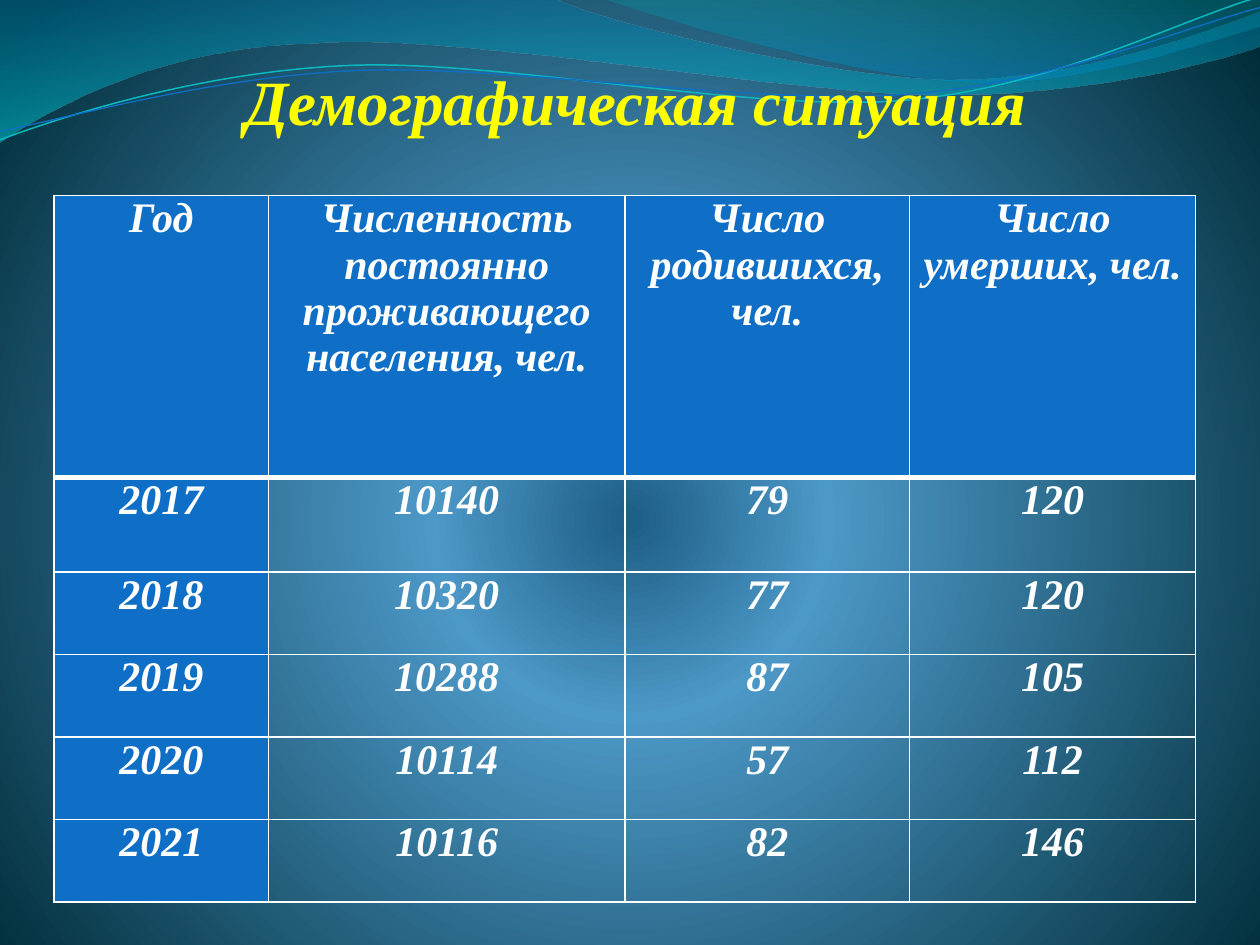
from dataclasses import dataclass
from math import cos, radians, sin
from typing import Optional

from lxml.etree import Element, SubElement
from pptx import Presentation
from pptx.dml.color import RGBColor as Rgb
from pptx.enum.text import MSO_ANCHOR as Anchor, MSO_AUTO_SIZE as Fit, PP_ALIGN as Align
from pptx.oxml.ns import qn
from pptx.util import Inches, Pt

FONT = "Times New Roman"
COLORS = {"blue": "0F6FC6", "white": "FFFFFF", "title": "FFFF00", "aqua": "0AB8BF"}
HEAD = ("Год", "Численность постоянно проживающего населения, чел.",
        "Число родившихся, чел.", "Число умерших, чел.")
DATA = ((2017, 10140, 79, 120), (2018, 10320, 77, 120), (2019, 10288, 87, 105),
        (2020, 10114, 57, 112), (2021, 10116, 82, 146))
TALL = 5.61
COLS = (1.7, 2.83, 2.26, 2.27)
ROWS = (2.24, 0.75) + ((TALL - 2.24 - 0.75) / 4,) * 4


@dataclass
class Stop:
    at: int
    color: str
    alpha: int = 100


@dataclass
class Wave:
    """Each step is a line end (2 numbers) or a Bezier curve (6 numbers)."""
    box: tuple
    start: tuple
    steps: tuple
    stops: tuple = ()
    line: Optional[str] = None
    width: float = 0
    turn: float = 0


BACK = (Stop(1, "1F6088"), Stop(25, "4C98C7"), Stop(100, "002C38"))
WAVES = (
    Wave((-0.01, -0.01, 10.02, 1.14), (0, 0),
         ((4.4, -0.01), (4.76, 0.17, 6.64, 0.63, 7.58, 0.63),
          (8.53, 0.63, 9.58, 0.26, 10, 0.09), (10.01, 0.36),
          (9.83, 0.44, 8.7, 0.76, 7.46, 0.75), (6.22, 0.75, 3.82, 0.28, 2.57, 0.34),
          (1.29, 0.36, 0.46, 0.83, -0.01, 1.13), (0, 0)),
         stops=(Stop(0, "0074A1", 45), Stop(100, "00C6CF", 55))),
    Wave((4.79, -0.01, 5.21, 0.7), (4.79, -0.01),
         ((5.09, 0.11, 6.82, 0.62, 7.69, 0.65), (8.56, 0.69, 9.61, 0.32, 10, 0.21),
          (10, 0), (4.79, -0.01)),
         stops=(Stop(0, "00A1A9", 30), Stop(80, "008BBF", 45))),
    Wave((-0.02, 0.22, 10.02, 0.71), (0, 1.11),
         ((0.48, 0.93, 1.58, 0.57, 2.77, 0.52), (3.95, 0.47, 5.93, 0.89, 7.13, 0.8),
          (8.33, 0.71, 9.38, 0.15, 9.98, -0.02)), line="aqua", width=0.85, turn=-2.7),
    Wave((-0.02, 0.3, 10.03, 0.58), (0, 1.04),
         ((0.47, 0.96, 1.64, 0.61, 2.83, 0.56), (4.03, 0.51, 5.97, 0.84, 7.17, 0.75),
          (8.36, 0.67, 9.41, 0.21, 10, 0.06)), line="blue", width=0.75, turn=-2.7),
)


def rgb(name: str) -> Rgb:
    return Rgb.from_string(COLORS[name])


def grad(stops: tuple) -> Element:
    """Gradient fill without its direction."""
    fill = Element(qn("a:gradFill"), rotWithShape="1")
    items = SubElement(fill, qn("a:gsLst"))
    for stop in stops:
        mark = SubElement(items, qn("a:gs"), pos=str(stop.at * 1000))
        color = SubElement(mark, qn("a:srgbClr"), val=stop.color)
        if stop.alpha < 100:
            SubElement(color, qn("a:alpha"), val=str(stop.alpha * 1000))
    return fill


def swap_fill(props: Element, fill: Element) -> None:
    props.replace(props.find(qn("a:noFill")), fill)


def paint_back(slide) -> None:
    slide.background.fill.background()
    fill = grad(BACK)
    path = SubElement(fill, qn("a:path"), path="circle")
    SubElement(path, qn("a:fillToRect"), l="10000", t="110000", r="10000", b="100000")
    swap_fill(slide.background._cSld.find(".//" + qn("p:bgPr")), fill)


def bend(shape, wave: Wave) -> None:
    """Give the outline its curves, measured in the unturned box."""
    left, top, wide, high = wave.box
    turn = radians(-wave.turn)
    route = shape._element.spPr.find(".//" + qn("a:path"))
    for part in list(route):
        route.remove(part)
    route.set("w", str(Inches(wide)))
    route.set("h", str(Inches(high)))

    def add(tag: str, nums: tuple) -> None:
        part = SubElement(route, qn("a:" + tag))
        for x, y in zip(nums[::2], nums[1::2]):
            dx, dy = x - left - wide / 2, y - top - high / 2
            px = wide / 2 + dx * cos(turn) - dy * sin(turn)
            py = high / 2 + dx * sin(turn) + dy * cos(turn)
            SubElement(part, qn("a:pt"), x=str(Inches(px)), y=str(Inches(py)))

    add("moveTo", wave.start)
    for step in wave.steps:
        add("lnTo" if len(step) == 2 else "cubicBezTo", step)
    if wave.stops:
        SubElement(route, qn("a:close"))


def draw_wave(slide, wave: Wave) -> None:
    pen = slide.shapes.build_freeform(*map(Inches, wave.start))
    pen.add_line_segments([tuple(map(Inches, s[-2:])) for s in wave.steps], close=False)
    shape = pen.convert_to_shape()
    shape.left, shape.top, shape.width, shape.height = map(Inches, wave.box)
    shape.rotation = wave.turn
    bend(shape, wave)
    shape.shadow.inherit = False
    shape.fill.background()
    if wave.line:
        shape.line.color.rgb = rgb(wave.line)
        shape.line.width = Pt(wave.width)
    else:
        shape.line.fill.background()
    if wave.stops:
        fill = grad(wave.stops)
        SubElement(fill, qn("a:lin"), ang="5400000", scaled="1")
        swap_fill(shape._element.spPr, fill)


def put_text(frame, text: str, size: int, color: str) -> None:
    para = frame.paragraphs[0]
    para.alignment = Align.CENTER
    run = para.add_run()
    run.text = text
    font = run.font
    font.name, font.size, font.bold, font.italic = FONT, Pt(size), True, True
    font.color.rgb = rgb(color)


def draw_title(slide, text: str) -> None:
    title = slide.shapes.title
    title.left, title.top = Inches(0.28), Inches(0.44)
    title.width, title.height = Inches(9.53), Inches(0.71)
    frame = title.text_frame
    frame.word_wrap = True
    frame.auto_size = Fit.SHAPE_TO_FIT_TEXT
    frame.vertical_anchor = Anchor.BOTTOM
    put_text(frame, text, 36, "title")
    title._element.getparent().append(title._element)  # in front of the waves


def set_edges(cell, top: int, bottom: int) -> None:
    props = cell._tc.get_or_add_tcPr()
    edges = {"lnL": 1, "lnR": 1, "lnT": top, "lnB": bottom}
    for i, (side, width) in enumerate(edges.items()):
        edge = Element(qn("a:" + side), w=str(Pt(width)))
        fill = SubElement(edge, qn("a:solidFill"))
        SubElement(fill, qn("a:srgbClr"), val=COLORS["white"])
        props.insert(i, edge)


def draw_table(slide) -> None:
    frame = slide.shapes.add_table(len(ROWS), len(COLS), Inches(0.43), Inches(1.55),
                                   Inches(sum(COLS)), Inches(TALL))
    table = frame.table
    table.first_col, table.horz_banding = True, False
    for col, width in zip(table.columns, COLS):
        col.width = Inches(width)
    for row, height in zip(table.rows, ROWS):
        row.height = Inches(height)
    for r, line in enumerate((HEAD, *DATA)):
        for c, value in enumerate(line):
            cell = table.cell(r, c)
            cell.margin_left = cell.margin_right = Inches(0.07)
            cell.margin_top = cell.margin_bottom = 0
            put_text(cell.text_frame, str(value), 24, "white")
            if r == 0 or c == 0:
                cell.fill.solid()
                cell.fill.fore_color.rgb = rgb("blue")
            else:
                cell.fill.background()
            set_edges(cell, top=3 if r == 1 else 1, bottom=3 if r == 0 else 1)


def main() -> None:
    deck = Presentation()
    deck.slide_width, deck.slide_height = Inches(10), Inches(7.5)
    slide = deck.slides.add_slide(deck.slide_layouts[5])
    paint_back(slide)
    for wave in WAVES:
        draw_wave(slide, wave)
    draw_title(slide, "Демографическая ситуация")
    draw_table(slide)
    deck.save("out.pptx")


if __name__ == "__main__":
    main()
